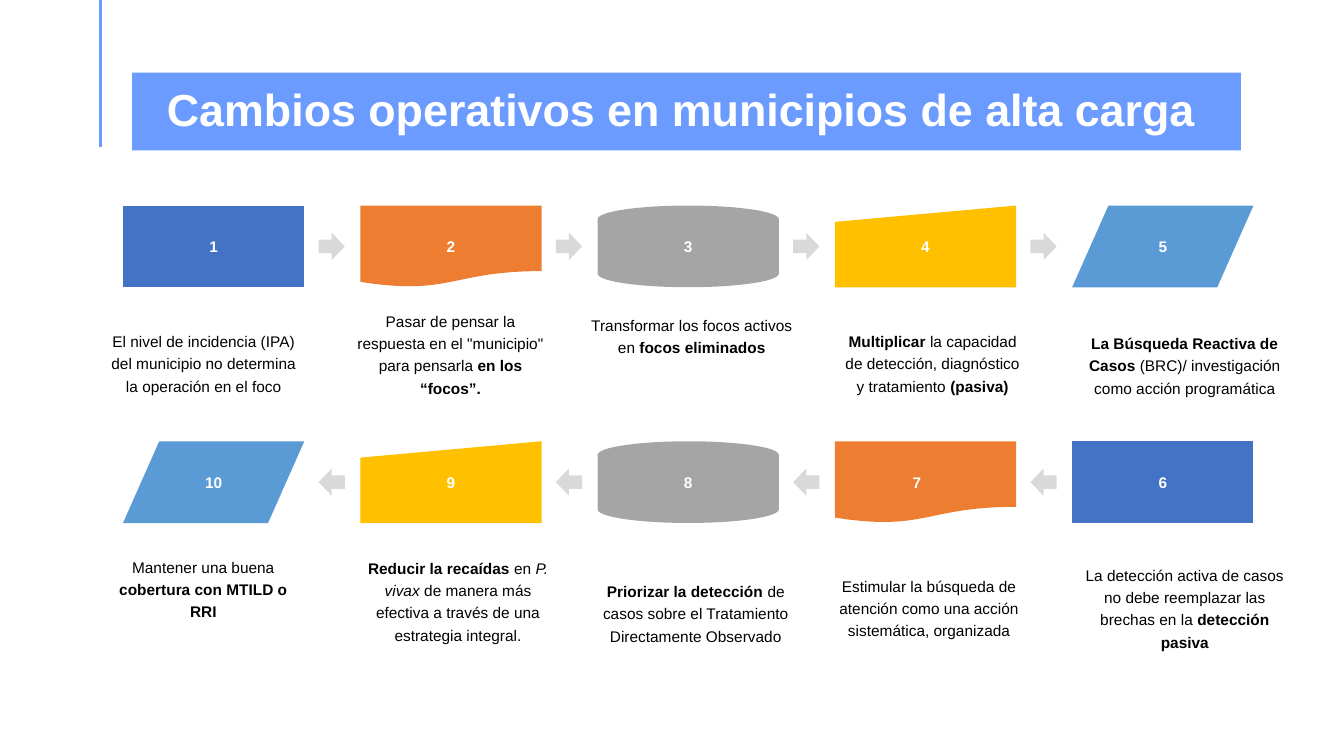
from collections import namedtuple
from dataclasses import dataclass
from lxml.etree import SubElement
from pptx import Presentation
from pptx.dml.color import RGBColor
from pptx.enum.shapes import MSO_CONNECTOR, MSO_SHAPE
from pptx.enum.text import MSO_ANCHOR, PP_ALIGN
from pptx.oxml.ns import qn
from pptx.util import Cm, Pt


@dataclass(frozen=True)
class Theme:
    font: str = "Arial"
    title_size: int = 32
    body_size: int = 11
    accent: str = "6B9BFF"
    arrow: str = "D9D9D9"
    text: str = "000000"
    light: str = "FFFFFF"


T = Theme()
Step = namedtuple("Step", "box runs")

TITLE = "Cambios operativos en municipios de alta carga"
STEPS = [
    Step((2.62, 8.23, 5.03, 1.78),
         [("El nivel de incidencia (IPA) del municipio no determina la operación en el foco", "")]),
    Step((8.84, 7.72, 5.03, 2.34),
         [('Pasar de pensar la respuesta en el "municipio" para pensarla ', ""),
          ("en los “focos”.", "b")]),
    Step((14.73, 7.77, 5.41, 1.32),
         [("Transformar los focos activos en", ""), (" focos eliminados", "b")]),
    Step((21.03, 8.23, 4.95, 1.78),
         [("Multiplicar", "b"), (" la capacidad de detección, diagnóstico y tratamiento ", ""),
          ("(pasiva)", "b")]),
    Step((27.03, 8.28, 5.66, 1.78),
         [("La Búsqueda Reactiva de Casos ", "b"),
          ("(BRC)/ investigación como acción programática", "")]),
    Step((27.03, 14.12, 5.66, 2.34),
         [("La detección activa de casos no debe reemplazar las brechas en la ", ""),
          ("detección pasiva", "b")]),
    Step((20.75, 14.4, 5.33, 1.78),
         [("Estimular la búsqueda de atención como una acción sistemática, organizada", "")]),
    Step((15.06, 14.53, 4.95, 1.78),
         [("Priorizar la detección ", "b"),
          ("de casos sobre el Tratamiento Directamente Observado", "")]),
    Step((9.07, 14.05, 4.95, 2.13),
         [("Reducir la recaídas ", "b"), ("en ", ""), ("P. vivax ", "i"),
          ("de manera más efectiva a través de una estrategia integral.", "")]),
    Step((2.84, 13.92, 4.57, 1.78),
         [("Mantener una buena ", ""), ("cobertura con MTILD o RRI", "b")]),
]
KINDS = [
    (MSO_SHAPE.FLOWCHART_PROCESS, "4472C4"),
    (MSO_SHAPE.FLOWCHART_DOCUMENT, "ED7D31"),
    (MSO_SHAPE.FLOWCHART_MAGNETIC_DISK, "A5A5A5"),
    (MSO_SHAPE.FLOWCHART_MANUAL_INPUT, "FFC000"),
    (MSO_SHAPE.FLOWCHART_DATA, "5B9BD5"),
]
COLS = len(KINDS)
LEFT, PITCH, STEP_W, STEP_H = 3.1, 5.98, 4.57, 2.06
ROW_TOPS = (5.18, 11.12)
ARROW_DX, ARROW_W, ARROW_H = 4.93, 0.66, 0.69
NUM_W, NUM_H = 1.2, 0.74
NUM_SHIFT = {7: -0.22}


def add_filled(s, kind, box, color):
    sp = s.shapes.add_shape(kind, *map(Cm, box))
    sp.shadow.inherit = False
    sp.fill.solid()
    sp.fill.fore_color.rgb = RGBColor.from_string(color)
    sp.line.fill.background()
    return sp


def write(tf, runs, size, color, spacing=1.0):
    tf.word_wrap = True
    tf.vertical_anchor = MSO_ANCHOR.MIDDLE
    p = tf.paragraphs[0]
    p.alignment = PP_ALIGN.CENTER
    p.line_spacing = spacing
    p.space_before = Pt(0)
    for text, style in runs:
        r = p.add_run()
        r.text = text
        r.font.name = T.font
        r.font.size = Pt(size)
        r.font.bold = "b" in style
        r.font.italic = "i" in style
        r.font.color.rgb = RGBColor.from_string(color)


def add_text(s, box, runs, color, spacing=1.0):
    tf = s.shapes.add_textbox(*map(Cm, box)).text_frame
    tf.margin_left = tf.margin_right = Cm(0.13)
    tf.margin_top = tf.margin_bottom = Cm(0.08)
    write(tf, runs, T.body_size, color, spacing)


def add_heading(s):
    rule = s.shapes.add_connector(MSO_CONNECTOR.STRAIGHT, Cm(2.54), Cm(0), Cm(2.54), Cm(3.71))
    rule.line.color.rgb = RGBColor.from_string(T.accent)
    rule.line.width = Pt(2.25)
    SubElement(rule._element.spPr, qn("a:effectLst"))
    title = s.shapes.title
    title.left, title.top, title.width, title.height = map(Cm, (3.33, 1.83, 27.94, 1.96))
    title.fill.solid()
    title.fill.fore_color.rgb = RGBColor.from_string(T.accent)
    title.text_frame.margin_right = Cm(0.5)
    write(title.text_frame, [(TITLE, "b")], T.title_size, T.light, 0.9)


def add_step(s, i, step):
    row, k = divmod(i, COLS)
    col = COLS - 1 - k if row else k
    x, y = LEFT + col * PITCH, ROW_TOPS[row]
    kind, color = KINDS[k]
    add_filled(s, kind, (x, y, STEP_W, STEP_H), color)
    num_x = x + (STEP_W - NUM_W) / 2 + NUM_SHIFT.get(i + 1, 0)
    add_text(s, (num_x, y + (STEP_H - NUM_H) / 2, NUM_W, NUM_H), [(str(i + 1), "b")], T.light)
    add_text(s, step.box, step.runs, T.text, 1.2)
    if col < COLS - 1:
        arrow = MSO_SHAPE.LEFT_ARROW if row else MSO_SHAPE.RIGHT_ARROW
        arrow_y = y + (STEP_H - ARROW_H) / 2
        add_filled(s, arrow, (x + ARROW_DX, arrow_y, ARROW_W, ARROW_H), T.arrow)


def main():
    prs = Presentation()
    prs.slide_width, prs.slide_height = Cm(33.87), Cm(19.05)
    s = prs.slides.add_slide(prs.slide_layouts[5])
    add_heading(s)
    for i, step in enumerate(STEPS):
        add_step(s, i, step)
    prs.save("out.pptx")


if __name__ == "__main__":
    main()
